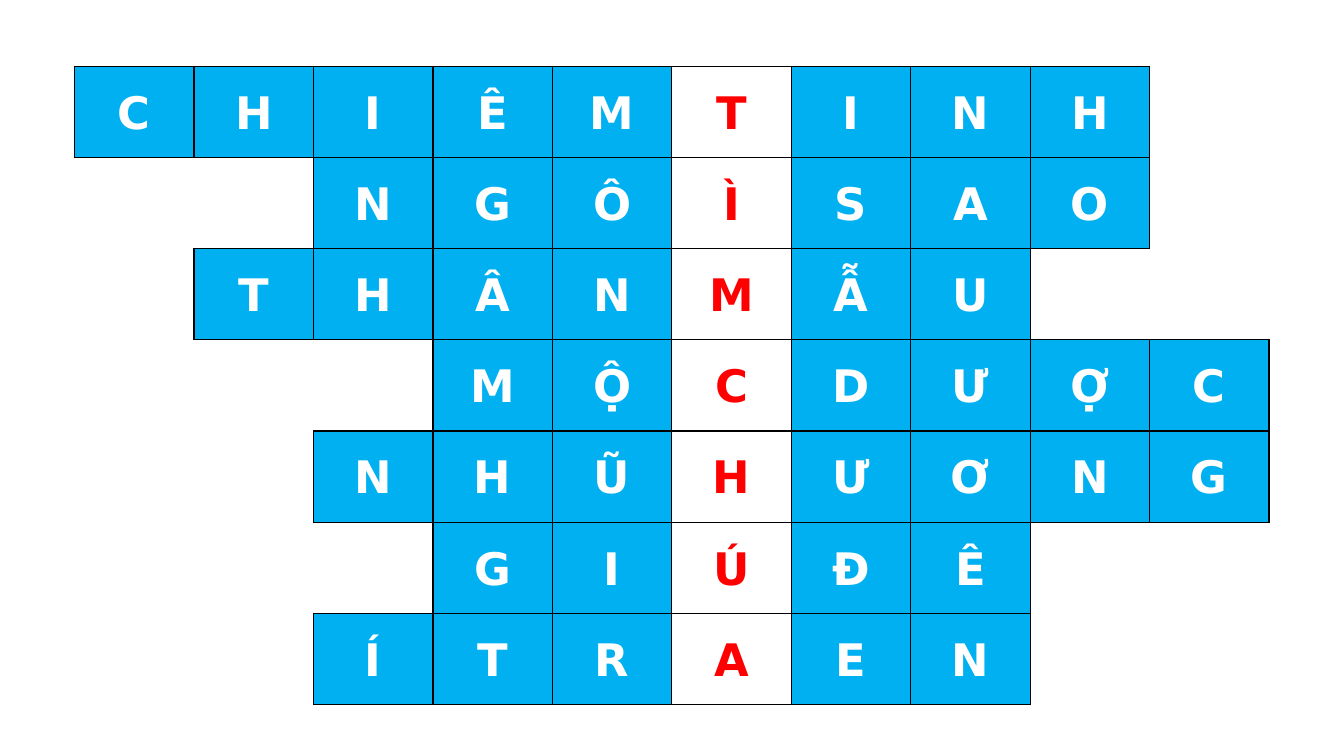
from lxml.etree import SubElement as Sub
from pptx import Presentation
from pptx.dml.color import RGBColor as Rgb
from pptx.enum.text import MSO_ANCHOR as Anchor, PP_ALIGN as Align
from pptx.oxml.ns import qn
from pptx.util import Inches, Pt

HUES = {"tile": "00B0F0", "plain": "FFFFFF", "key": "FF0000", "line": "000000"}
KEY = 5  # column that spells the answer
# First column and letters of each word
WORDS = [
    (0, "CHIÊMTINH"),
    (2, "NGÔÌSAO"),
    (1, "THÂNMẪU"),
    (3, "MỘCDƯỢC"),
    (2, "NHŨHƯƠNG"),
    (3, "GIÚĐÊ"),
    (2, "ÍTRAEN"),
]
COLS = max(start + len(word) for start, word in WORDS)

CELL = {
    "vertical_anchor": Anchor.MIDDLE,
    "margin_left": Inches(0.07), "margin_right": Inches(0.07),
    "margin_top": 0, "margin_bottom": 0,
}
PARA = {"alignment": Align.CENTER, "line_spacing": 1.07, "space_after": Pt(8)}
FONT = {"name": "DejaVu Sans", "size": Pt(32), "bold": True}
SIDES = {"lnL": (0, -1), "lnR": (0, 1), "lnT": (-1, 0), "lnB": (1, 0)}


def apply(item, style):
    for name, value in style.items():
        setattr(item, name, value)


def hue(name):
    return Rgb.from_string(HUES[name])


def edge(cell, tag, rank, shown):
    """Draw or clear one side of a cell."""
    props = cell._tc.get_or_add_tcPr()
    line = Sub(props, qn(f"a:{tag}"), w=str(Pt(1)))
    if shown:
        fill = Sub(line, qn("a:solidFill"))
        Sub(fill, qn("a:srgbClr"), val=HUES["line"])
    else:
        Sub(line, qn("a:noFill"))
    props.insert(rank, line)  # sides come before the fill


def letter(cell, text, is_key):
    """Fill a tile and write its letter."""
    cell.fill.solid()
    cell.fill.fore_color.rgb = hue("plain" if is_key else "tile")
    apply(cell, CELL)
    para = cell.text_frame.paragraphs[0]
    apply(para, PARA)
    run = para.add_run()
    run.text = text
    apply(run.font, FONT)
    run.font.color.rgb = hue("key" if is_key else "plain")


def puzzle(slide, left, top, width, height):
    """Place the crossword table in the given box."""
    frame = slide.shapes.add_table(len(WORDS), COLS, left, top, width, height)
    table = frame.table
    table.first_row = table.horz_banding = False
    for col in table.columns:
        col.width = width // COLS
    for row in table.rows:
        row.height = height // len(WORDS)

    tiles = {(r, start + i): text
             for r, (start, word) in enumerate(WORDS)
             for i, text in enumerate(word)}
    for r in range(len(WORDS)):
        for c in range(COLS):
            cell = table.cell(r, c)
            if (r, c) in tiles:
                letter(cell, tiles[r, c], c == KEY)
            else:
                cell.fill.background()
            # A side shows when a tile lies on either hand of it
            for rank, (tag, (down, over)) in enumerate(SIDES.items()):
                shown = (r, c) in tiles or (r + down, c + over) in tiles
                edge(cell, tag, rank, shown)


def main():
    deck = Presentation()
    deck.slide_width, deck.slide_height = Inches(13.33), Inches(7.5)
    slide = deck.slides.add_slide(deck.slide_layouts[6])
    puzzle(slide, Inches(0.74), Inches(0.66), Inches(11.85), Inches(6.33))
    deck.save("out.pptx")


if __name__ == "__main__":
    main()
